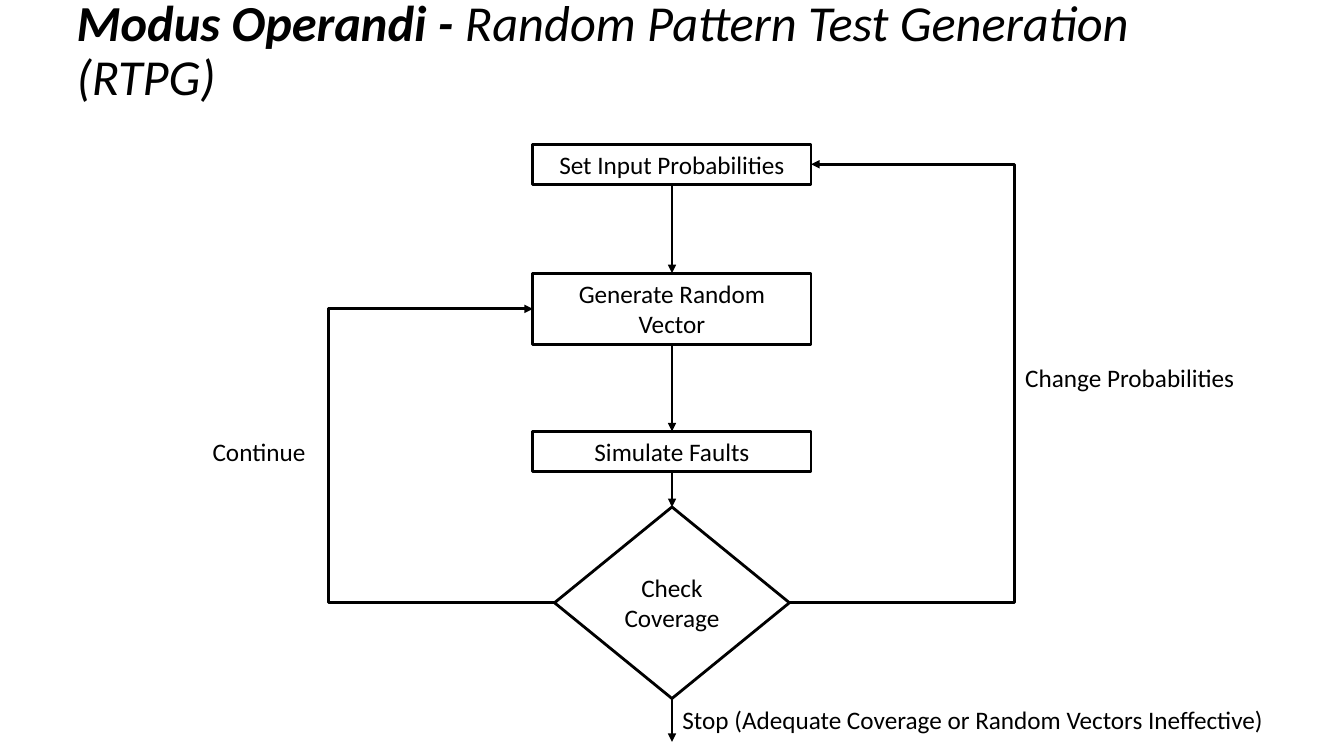
from lxml import etree
from pptx import Presentation
from pptx import util as u
from pptx.dml.color import RGBColor
from pptx.enum import shapes, text
from pptx.oxml.ns import qn

SLIDE_WIDTH, SLIDE_HEIGHT = 13.33, 7.5
CENTRE = SLIDE_WIDTH / 2
FONT, BLACK, WHITE = "Calibri", "000000", "FFFFFF"
TOP, LEFT, BOTTOM, RIGHT = range(4)

TITLE_RUNS = [("Modus Operandi - ", True),
              ("Random Pattern Test Generation (RTPG)", False)]
TITLE_BOX = (0.66, 0.03, 11.89, 1.08)

# name: (wording, shape, top, width, height)
STEPS = {
    "set": ("Set Input Probabilities", "RECTANGLE", 1.43, 2.76, 0.4),
    "generate": ("Generate Random Vector", "RECTANGLE", 2.71, 2.76, 0.71),
    "simulate": ("Simulate Faults", "RECTANGLE", 4.28, 2.76, 0.4),
    "check": ("Check Coverage", "DIAMOND", 5.03, 2.33, 1.9),
}
FLOW = [("set", "generate"), ("generate", "simulate"), ("simulate", "check")]
# target step, side used at both ends, x of the vertical stretch
LOOPS = [("set", RIGHT, 10.06), ("generate", LEFT, 3.26)]
STOP_Y = 7.36
LABELS = [
    ("Continue", 2.01, 4.28, 1.38),
    ("Change Probabilities", 10.07, 3.55, 2.69),
    ("Stop (Adequate Coverage or Random Vectors Ineffective)", 6.67, 6.94, 6.19),
]
LABEL_HEIGHT = 0.4


def colour(value):
    return RGBColor.from_string(value)


def add_run(paragraph, wording, size, bold=False, italic=False):
    run = paragraph.add_run()
    run.text = wording
    run.font.name, run.font.size = FONT, u.Pt(size)
    run.font.bold, run.font.italic = bold, italic
    run.font.color.rgb = colour(BLACK)


def add_title(slide):
    title = slide.shapes.title
    title.left, title.top, title.width, title.height = map(u.Inches, TITLE_BOX)
    frame = title.text_frame
    frame.word_wrap = True
    frame.auto_size = text.MSO_AUTO_SIZE.NONE
    frame.vertical_anchor = text.MSO_ANCHOR.BOTTOM
    paragraph = frame.paragraphs[0]
    paragraph.alignment = text.PP_ALIGN.LEFT
    paragraph.line_spacing = 0.9
    for wording, bold in TITLE_RUNS:
        add_run(paragraph, wording, 36, bold, italic=True)


def add_step(slide, wording, kind, top, width, height):
    box = map(u.Inches, (CENTRE - width / 2, top, width, height))
    shape = slide.shapes.add_shape(shapes.MSO_SHAPE[kind], *box)
    shape.shadow.inherit = False
    shape.line.color.rgb = colour(BLACK)
    shape.line.width = u.Pt(2)
    frame = shape.text_frame
    frame.word_wrap = True
    if kind == "DIAMOND":
        shape.fill.solid()
        shape.fill.fore_color.rgb = colour(WHITE)
        frame.vertical_anchor = text.MSO_ANCHOR.MIDDLE
    else:
        shape.fill.background()
        frame.vertical_anchor = text.MSO_ANCHOR.TOP
    frame.paragraphs[0].alignment = text.PP_ALIGN.CENTER
    add_run(frame.paragraphs[0], wording, 18)
    return shape


def add_arrow(slide, kind, start, start_side, end=None, end_side=TOP):
    """Join two steps, or lead from a step down to the stop when end is None."""
    arrow = slide.shapes.add_connector(
        kind, 0, 0, u.Inches(CENTRE), u.Inches(STOP_Y))
    arrow.begin_connect(start, start_side)
    if end is not None:
        arrow.end_connect(end, end_side)
    arrow.line.color.rgb = colour(BLACK)
    arrow.line.width = u.Pt(2)
    properties = arrow._element.spPr
    etree.SubElement(properties.find(qn("a:ln")), qn("a:tailEnd"), type="triangle")
    etree.SubElement(properties, qn("a:effectLst"))
    return arrow


def bend_at(arrow, x):
    """Place the vertical stretch of an elbow arrow at x inches."""
    share = (u.Inches(x) - arrow.begin_x) / (arrow.end_x - arrow.begin_x)
    geometry = arrow._element.spPr.find(qn("a:prstGeom"))
    adjustments = geometry.find(qn("a:avLst"))
    if adjustments is None:
        adjustments = etree.SubElement(geometry, qn("a:avLst"))
    etree.SubElement(adjustments, qn("a:gd"), name="adj1",
                     fmla=f"val {round(share * 100000)}")


def add_label(slide, wording, left, top, width):
    box = map(u.Inches, (left, top, width, LABEL_HEIGHT))
    frame = slide.shapes.add_textbox(*box).text_frame
    frame.word_wrap = True
    add_run(frame.paragraphs[0], wording, 18)


def main():
    presentation = Presentation()
    presentation.slide_width = u.Inches(SLIDE_WIDTH)
    presentation.slide_height = u.Inches(SLIDE_HEIGHT)
    slide = presentation.slides.add_slide(presentation.slide_layouts[5])
    add_title(slide)

    steps = {name: add_step(slide, *step) for name, step in STEPS.items()}
    straight, elbow = shapes.MSO_CONNECTOR.STRAIGHT, shapes.MSO_CONNECTOR.ELBOW
    for target, side, x in LOOPS:
        bend_at(add_arrow(slide, elbow, steps["check"], side, steps[target], side), x)
    for start, end in FLOW:
        add_arrow(slide, straight, steps[start], BOTTOM, steps[end], TOP)
    add_arrow(slide, straight, steps["check"], BOTTOM)

    for label in LABELS:
        add_label(slide, *label)
    presentation.save("out.pptx")


if __name__ == "__main__":
    main()
